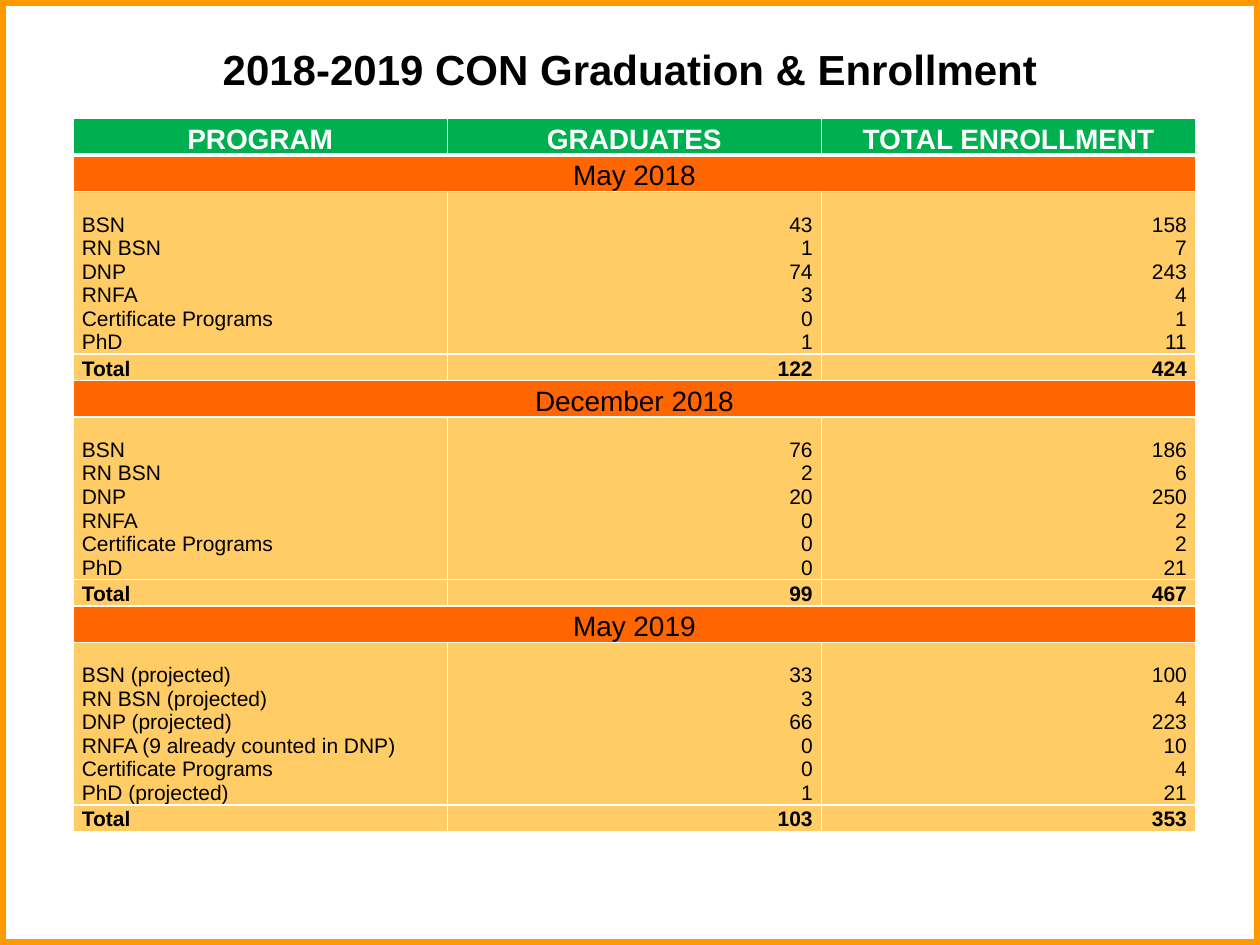
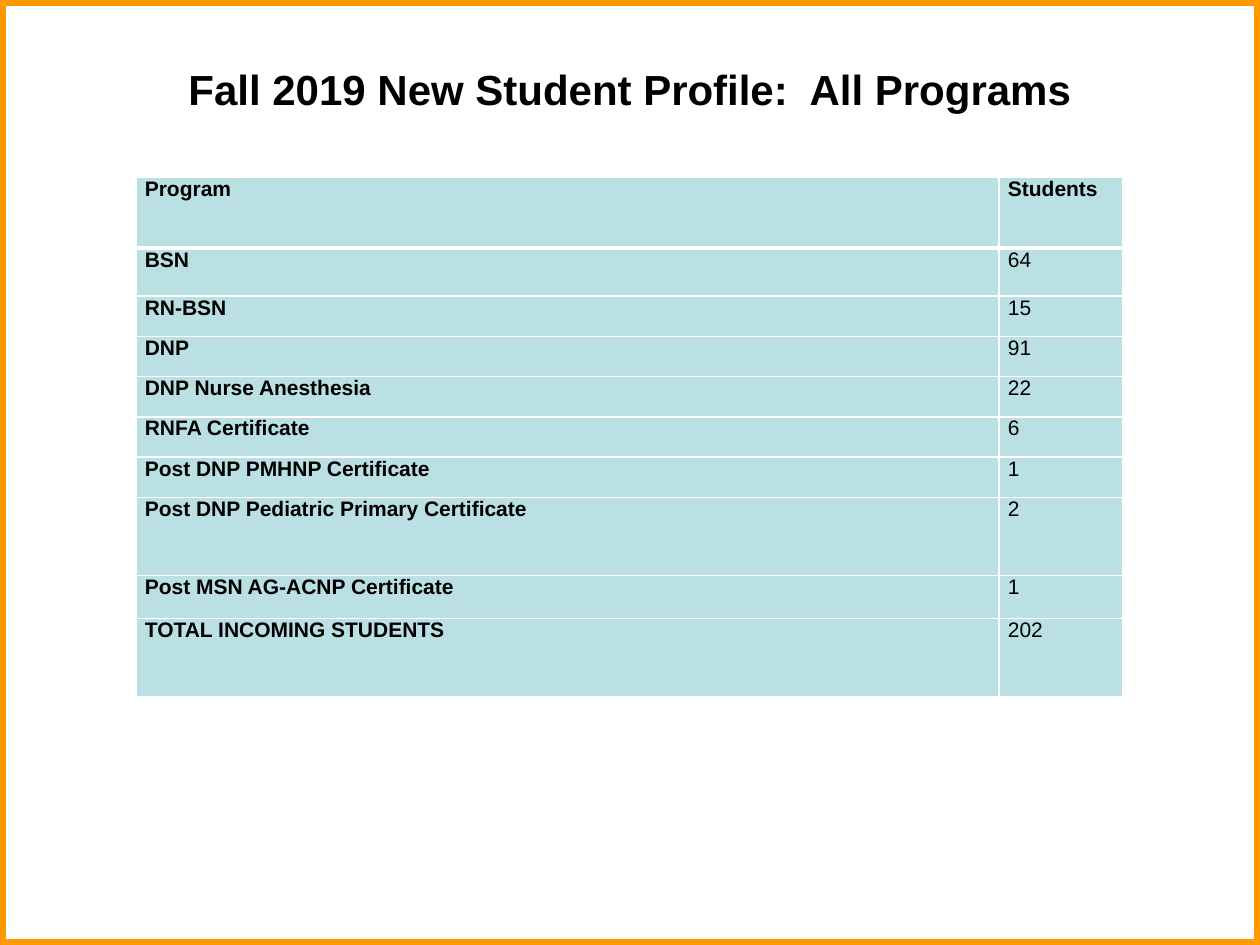
from lxml import etree
from pptx import Presentation
from pptx import util as u
from pptx.dml import color
from pptx.enum import shapes, text
from pptx.oxml import ns

HUES = {"frame": "FF9900", "ink": "000000", "white": "FFFFFF", "head": "00B050",
        "term": "FF6600", "body": "FFCC66", "teal": "BBE0E3"}
FONT = {"name": "Arial", "size": u.Pt(12), "bold": False}
BOLD = FONT | {"bold": True}
TERM = FONT | {"size": u.Pt(16)}
HEAD = TERM | {"bold": True}
TITLE = BOLD | {"size": u.Pt(24)}
LEFT, MID, RIGHT = text.PP_ALIGN.LEFT, text.PP_ALIGN.CENTER, text.PP_ALIGN.RIGHT
TOP, LOW = text.MSO_ANCHOR.TOP, text.MSO_ANCHOR.BOTTOM

PLANS = ["BSN", "RN BSN", "DNP", "RNFA", "Certificate Programs", "PhD"]
SOON = ["BSN (projected)", "RN BSN (projected)", "DNP (projected)",
        "RNFA (9 already counted in DNP)", "Certificate Programs", "PhD (projected)"]
TERMS = [
    ("May 2018", PLANS, [43, 1, 74, 3, 0, 1], [158, 7, 243, 4, 1, 11], (122, 424)),
    ("December 2018", PLANS, [76, 2, 20, 0, 0, 0], [186, 6, 250, 2, 2, 21], (99, 467)),
    ("May 2019", SOON, [33, 3, 66, 0, 0, 1], [100, 4, 223, 10, 4, 21], (103, 353)),
]
INTAKE = [
    ("Program", "Students", 0.56), ("BSN", 64, 0.38), ("RN-BSN", 15, 0.32),
    ("DNP", 91, 0.32), ("DNP Nurse Anesthesia", 22, 0.32),
    ("RNFA Certificate", 6, 0.32), ("Post DNP PMHNP Certificate", 1, 0.32),
    ("Post DNP Pediatric Primary Certificate", 2, 0.62),
    ("Post MSN AG-ACNP Certificate", 1, 0.34), ("TOTAL INCOMING STUDENTS", 202, 0.62),
]


def rgb(hue):
    """Return the named colour."""
    return color.RGBColor.from_string(HUES[hue])


def apply(obj, looks):
    """Set every attribute in a dict of format values."""
    for key, value in looks.items():
        setattr(obj, key, value)


def style(frame, font, hue, align):
    """Format all paragraphs of a text frame."""
    for para in frame.paragraphs:
        para.alignment = align
        apply(para.font, font)
        para.font.color.rgb = rgb(hue)


def start(deck, title, top, height):
    """Add a slide with the shared frame and a title."""
    slide = deck.slides.add_slide(deck.slide_layouts[6])
    frame = slide.shapes.add_shape(shapes.MSO_SHAPE.RECTANGLE, 0, 0,
                                   deck.slide_width, deck.slide_height)
    frame.shadow.inherit = False
    frame.fill.background()
    frame.line.color.rgb = rgb("frame")
    frame.line.width = u.Pt(6.5)
    box = slide.shapes.add_textbox(u.Inches(0.5), u.Inches(top),
                                   u.Inches(9), u.Inches(height)).text_frame
    apply(box, {"text": title, "word_wrap": True,
                "vertical_anchor": text.MSO_ANCHOR.MIDDLE})
    style(box, TITLE, "ink", MID)
    return slide


def edge(cell, widths):
    """Draw white cell borders, given widths in points by side."""
    props = cell._tc.get_or_add_tcPr()
    for side, width in widths.items():
        line = etree.SubElement(props, ns.qn("a:ln" + side), w=str(u.Pt(width)))
        paint = etree.SubElement(line, ns.qn("a:solidFill"))
        etree.SubElement(paint, ns.qn("a:srgbClr"), val=HUES["white"])


def grid(slide, left, top, cols, rows):
    """Add a bordered table with a thick rule under its first row."""
    spot = [u.Inches(n) for n in (left, top, sum(cols), sum(rows))]
    table = slide.shapes.add_table(len(rows), len(cols), *spot).table
    apply(table, {"first_row": False, "horz_banding": False})
    for col, width in zip(table.columns, cols):
        col.width = u.Inches(width)
    for i, (row, height) in enumerate(zip(table.rows, rows)):
        row.height = u.Inches(height)
        for cell in row.cells:
            edge(cell, {"L": 1, "R": 1, "T": 3 if i == 1 else 1, "B": 3 if i == 0 else 1})
    return table


def put(cell, words, back, font, hue="ink", align=LEFT, anchor=LOW):
    """Fill one cell with text on a colour."""
    side = u.Inches(0.07)
    apply(cell, {"text": str(words), "vertical_anchor": anchor, "margin_left": side,
                 "margin_right": side, "margin_top": 0, "margin_bottom": 0})
    cell.fill.solid()
    cell.fill.fore_color.rgb = rgb(back)
    style(cell.text_frame, font, hue, align)


def lines(items):
    """Join items, one to a paragraph."""
    return "\n".join(map(str, items))


def grads(deck):
    """Build the graduation and enrollment slide."""
    slide = start(deck, "2018-2019 CON Graduation & Enrollment", 0.21, 0.67)
    table = grid(slide, 0.58, 0.94, [2.97] * 3, [0.29] + [0.29, 1.29, 0.21] * len(TERMS))
    for col, name in enumerate(["PROGRAM", "GRADUATES", "TOTAL ENROLLMENT"]):
        put(table.cell(0, col), name, "head", HEAD, "white", MID)
    for i, (term, plans, done, roll, sums) in enumerate(TERMS):
        row = 1 + 3 * i
        table.cell(row, 0).merge(table.cell(row, 2))
        put(table.cell(row, 0), term, "term", TERM, align=MID)
        for col, (items, total) in enumerate(zip((plans, done, roll), ("Total", *sums))):
            align = RIGHT if col else LEFT
            put(table.cell(row + 1, col), lines(items), "body", FONT, align=align)
            put(table.cell(row + 2, col), total, "body", BOLD, align=align)


def intake(deck):
    """Build the new student profile slide."""
    slide = start(deck, "Fall 2019 New Student Profile:  All Programs", 0.33, 0.75)
    table = grid(slide, 1.08, 1.41, [6.85, 0.98], [item[2] for item in INTAKE])
    for row, (name, count, _) in enumerate(INTAKE):
        put(table.cell(row, 0), name, "teal", BOLD, anchor=TOP)
        put(table.cell(row, 1), count, "teal", FONT if row else BOLD, anchor=TOP)


def main():
    """Build and save the deck."""
    deck = Presentation()
    apply(deck, {"slide_width": u.Inches(10), "slide_height": u.Inches(7.5)})
    grads(deck)
    intake(deck)
    deck.save("out.pptx")


if __name__ == "__main__":
    main()
